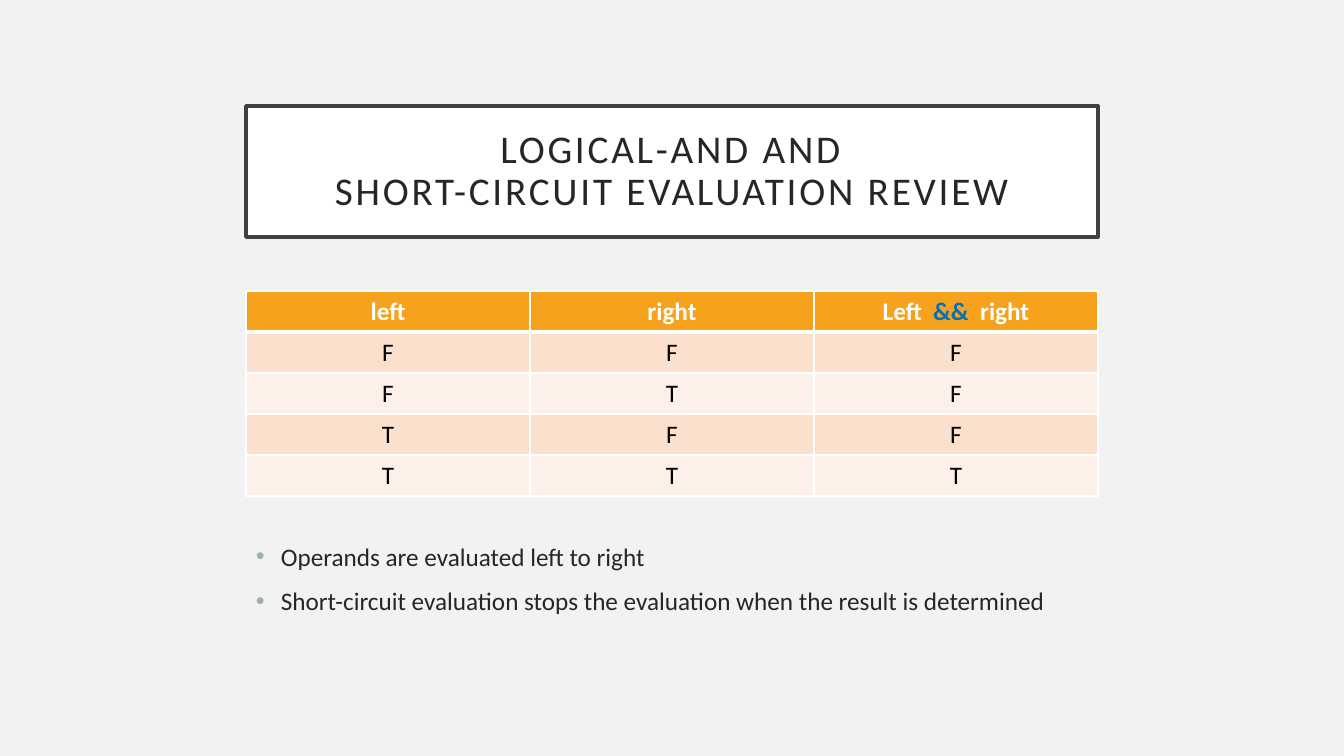
from lxml.etree import SubElement
from pptx import Presentation
from pptx.dml.color import RGBColor as Color
from pptx.enum.shapes import MSO_SHAPE as Shape
from pptx.enum.text import MSO_ANCHOR as Anchor, PP_ALIGN as Align
from pptx.oxml.ns import qn
from pptx.util import Emu, Pt

EMU_PER_PX = 914400 / 100.8
LEFT, WIDTH = 246, 852
ROW_HEIGHT = 41
COLORS = {
    "page": "F2F2F2",
    "white": "FFFFFF",
    "frame": "404040",
    "text": "262626",
    "black": "000000",
    "header": "F6A21D",
    "operator": "0070C0",
    "band_dark": "FBE0CD",
    "band_light": "FDF0E8",
    "bullet": "9BAFB5",
}
TITLE_LINES = ["LOGICAL-AND AND", "SHORT-CIRCUIT EVALUATION REVIEW"]
HEADINGS = [
    [("left", "white")],
    [("right", "white")],
    [("Left  ", "white"), ("&&", "operator"), ("  right", "white")],
]
TRUTH_ROWS = ["FFF", "FTF", "TFF", "TTT"]
BULLETS = [
    "Operands are evaluated left to right",
    "Short-circuit evaluation stops the evaluation when the result is determined",
]


def px(length):
    """Turn pixels into EMU."""
    return Emu(round(length * EMU_PER_PX))


def color(name):
    """Look up a named colour."""
    return Color.from_string(COLORS[name])


def apply_format(target, values):
    """Set each attribute of a format dict."""
    for name, value in values.items():
        setattr(target, name, value)


def paint(fill, name):
    """Give a fill one solid colour."""
    fill.solid()
    fill.fore_color.rgb = color(name)


def add_span(para, text, color_name, size=18, bold=False):
    """Add a run of styled text to a paragraph."""
    span = para.add_run()
    span.text = text
    apply_format(span.font, {"name": "Calibri", "size": Pt(size), "bold": bold})
    span.font.color.rgb = color(color_name)
    return span


def add_title(page, top, height):
    """Add the framed title with its letter-spaced lines."""
    box = page.shapes.add_shape(
        Shape.RECTANGLE, px(LEFT), px(top), px(WIDTH), px(height))
    box.shadow.inherit = False
    paint(box.fill, "white")
    paint(box.line.fill, "frame")
    box.line.width = Pt(2.5)
    frame = box.text_frame
    sides = ("left", "right", "top", "bottom")
    apply_format(frame, {f"margin_{side}": px(20) for side in sides})
    apply_format(frame, {"word_wrap": True, "vertical_anchor": Anchor.MIDDLE})
    para = frame.paragraphs[0]
    apply_format(para, {"alignment": Align.CENTER, "line_spacing": 0.9})
    for index, line in enumerate(TITLE_LINES):
        if index:
            para.add_line_break()
        span = add_span(para, line, "text", size=28)
        span.font._element.set("spc", "200")


def add_borders(cell, widths):
    """Draw white cell borders with the given point widths."""
    properties = cell._tc.get_or_add_tcPr()
    for side, width in widths.items():
        border = SubElement(properties, qn(f"a:ln{side}"), w=str(Pt(width)))
        fill = SubElement(border, qn("a:solidFill"))
        SubElement(fill, qn("a:srgbClr"), val=COLORS["white"])


def fill_cell(cell, spans, fill_name, widths, bold):
    """Set the text, borders and fill of a table cell."""
    para = cell.text_frame.paragraphs[0]
    para.alignment = Align.CENTER
    for text, color_name in spans:
        add_span(para, text, color_name, bold=bold)
    add_borders(cell, widths)
    paint(cell.fill, fill_name)


def add_truth_table(page, top):
    """Add the truth table with its header and banded rows."""
    rows = [HEADINGS] + [[[(value, "black")] for value in row] for row in TRUTH_ROWS]
    table = page.shapes.add_table(
        len(rows), len(HEADINGS), px(LEFT), px(top),
        px(WIDTH), px(ROW_HEIGHT * len(rows))).table
    for row_index, row in enumerate(rows):
        table.rows[row_index].height = px(ROW_HEIGHT)
        is_header = row_index == 0
        band = "band_dark" if row_index % 2 else "band_light"
        widths = {"L": 1, "R": 1, "T": 3 if row_index == 1 else 1,
                  "B": 3 if is_header else 1}
        for column_index, spans in enumerate(row):
            fill_cell(table.cell(row_index, column_index), spans,
                      "header" if is_header else band, widths, is_header)


def add_bullets(page, top, height):
    """Add the bulleted remarks below the table."""
    box = page.shapes.add_textbox(px(LEFT), px(top), px(WIDTH), px(height))
    frame = box.text_frame
    frame.word_wrap = True
    for index, text in enumerate(BULLETS):
        para = frame.add_paragraph() if index else frame.paragraphs[0]
        para.space_before = Pt(10)
        add_span(para, text, "text")
        properties = para._p.get_or_add_pPr()
        properties.set("marL", str(px(25)))
        properties.set("indent", str(px(-25)))
        bullet_color = SubElement(properties, qn("a:buClr"))
        SubElement(bullet_color, qn("a:srgbClr"), val=COLORS["bullet"])
        SubElement(properties, qn("a:buFont"), typeface="Arial")
        SubElement(properties, qn("a:buChar"), char="•")


def main():
    """Build the slide and save the deck."""
    deck = Presentation()
    apply_format(deck, {"slide_width": px(1344), "slide_height": px(756)})
    page = deck.slides.add_slide(deck.slide_layouts[6])
    paint(page.background.fill, "page")
    add_title(page, 106, 131)
    add_truth_table(page, 291)
    add_bullets(page, 536, 87)
    deck.save("out.pptx")


if __name__ == "__main__":
    main()
